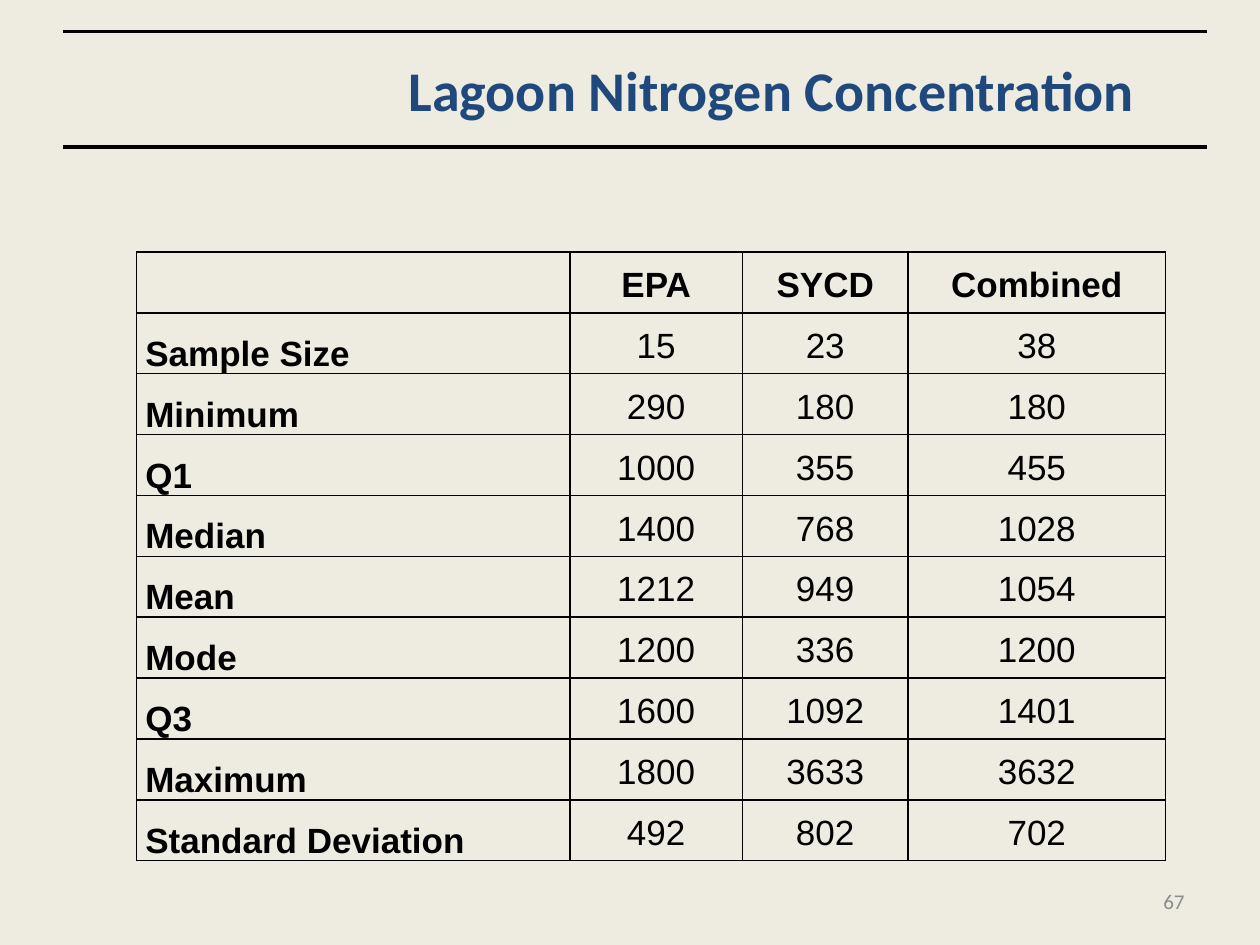
from lxml.etree import SubElement
from pptx import Presentation
from pptx.dml.color import RGBColor
from pptx.enum.text import MSO_ANCHOR, PP_ALIGN
from pptx.oxml.ns import qn
from pptx.util import Inches, Pt

COLORS = {"paper": "EEECE1", "title": "1F497D", "ink": "000000", "muted": "8C8C8C"}
GRID_COLS, GRID_ROWS = 120, 90
COLUMN_WIDTHS = [41.3, 16.4, 15.8, 24.5]
STATISTICS = [
    ("", "EPA", "SYCD", "Combined"),
    ("Sample Size", 15, 23, 38),
    ("Minimum", 290, 180, 180),
    ("Q1", 1000, 355, 455),
    ("Median", 1400, 768, 1028),
    ("Mean", 1212, 949, 1054),
    ("Mode", 1200, 336, 1200),
    ("Q3", 1600, 1092, 1401),
    ("Maximum", 1800, 3633, 3632),
    ("Standard Deviation", 492, 802, 702),
]


def rgb(name):
    return RGBColor.from_string(COLORS[name])


def write(tf, text, size=20, font="Arial", color="ink", bold=False,
          align=PP_ALIGN.CENTER, spacing=None):
    p = tf.paragraphs[0]
    p.alignment = align
    p.line_spacing = spacing
    r = p.add_run()
    r.text = text
    r.font.size, r.font.name, r.font.bold = Pt(size), font, bold
    r.font.color.rgb = rgb(color)


def add_borders(cell, width=1):
    tc_pr = cell._tc.get_or_add_tcPr()
    for side in ("a:lnL", "a:lnR", "a:lnT", "a:lnB"):
        ln = SubElement(tc_pr, qn(side), w=str(Pt(width)))
        fill = SubElement(ln, qn("a:solidFill"))
        SubElement(fill, qn("a:srgbClr"), val=COLORS["ink"])


class SlideBuilder:
    """Holds the current slide; positions are grid columns and rows."""

    def __init__(self, prs):
        self.prs = prs
        self.s = prs.slides.add_slide(prs.slide_layouts[5])
        self.s.background.fill.solid()
        self.s.background.fill.fore_color.rgb = rgb("paper")

    def x(self, cols):
        return round(self.prs.slide_width * cols / GRID_COLS)

    def y(self, rows):
        return round(self.prs.slide_height * rows / GRID_ROWS)

    def box(self, left, top, width, height):
        return self.x(left), self.y(top), self.x(width), self.y(height)

    def rule(self, left, right, row):
        line = self.s.shapes.add_connector(
            1, self.x(left), self.y(row), self.x(right), self.y(row))
        line.line.width = Pt(2)
        line.line.color.rgb = rgb("ink")
        SubElement(line._element.spPr, qn("a:effectLst"))

    def title(self, text, *area):
        sp = self.s.shapes.title
        sp.left, sp.top, sp.width, sp.height = self.box(*area)
        sp.text_frame.vertical_anchor = MSO_ANCHOR.MIDDLE
        write(sp.text_frame, text, size=32, font="Calibri", color="title", bold=True)

    def page_number(self, text, *area):
        tf = self.s.shapes.add_textbox(*self.box(*area)).text_frame
        tf.word_wrap = True
        tf.vertical_anchor = MSO_ANCHOR.MIDDLE
        write(tf, text, size=12, font="Calibri", color="muted", align=PP_ALIGN.RIGHT)

    def table(self, rows, widths, *area):
        table = self.s.shapes.add_table(len(rows), len(widths), *self.box(*area)).table
        table.first_row = table.horz_banding = False
        for column, width in zip(table.columns, widths):
            column.width = self.x(width)
        for i, values in enumerate(rows):
            for j, value in enumerate(values):
                self.cell(table.cell(i, j), str(value), header=i == 0, label=j == 0)

    def cell(self, cell, text, header, label):
        cell.margin_left = cell.margin_right = Inches(0.07)
        cell.margin_top = cell.margin_bottom = 0
        cell.vertical_anchor = MSO_ANCHOR.BOTTOM if label else MSO_ANCHOR.MIDDLE
        add_borders(cell)
        cell.fill.background()
        if text:
            write(cell.text_frame, text, bold=header or label, spacing=1.15,
                  align=PP_ALIGN.LEFT if label else PP_ALIGN.CENTER)


def main():
    prs = Presentation()
    prs.slide_width, prs.slide_height = Inches(10), Inches(7.5)
    slide = SlideBuilder(prs)
    for row in (14, 3):
        slide.rule(6, 115, row)
    slide.title("Lagoon Nitrogen Concentration", 32, 3, 83, 11)
    slide.page_number("67", 86, 83.4, 28, 4.8)
    slide.table(STATISTICS, COLUMN_WIDTHS, 13, 24, 98, 58)
    prs.save("out.pptx")


if __name__ == "__main__":
    main()
